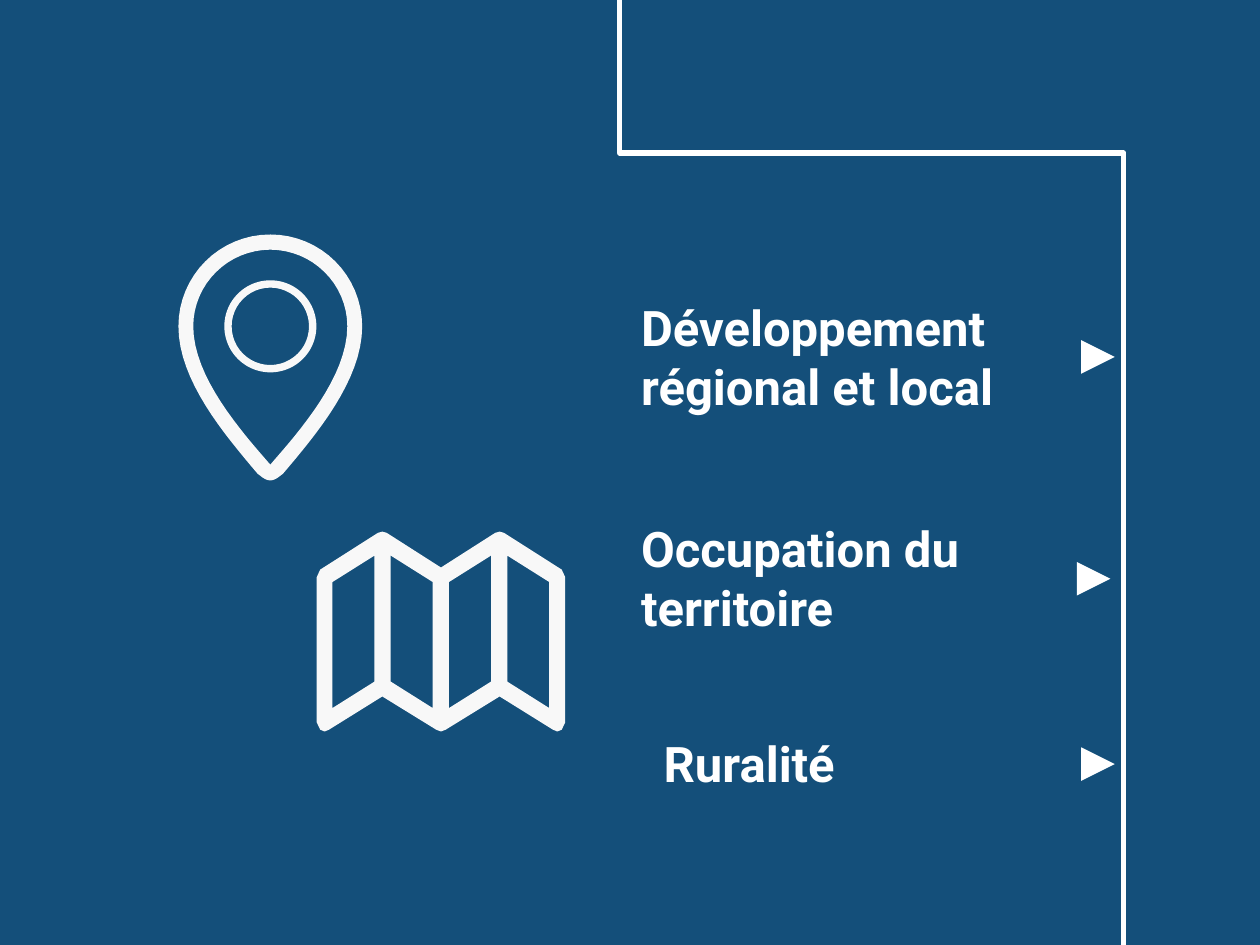
from pptx import Presentation
from pptx.dml.color import RGBColor
from pptx.enum.shapes import MSO_CONNECTOR, MSO_SHAPE
from pptx.enum.text import MSO_AUTO_SIZE
from pptx.util import Pt
from lxml.etree import SubElement
from pptx.oxml.ns import qn

BLUE = RGBColor(0x14, 0x4F, 0x7A)
WHITE = RGBColor(0xFF, 0xFF, 0xFF)
PALE = RGBColor(0xF8, 0xF8, 0xF8)

THEMES = [
    ("Développement régional et local", (359.3, 166.3, 234, 74.9), (617.8, 194.4)),
    ("Occupation du territoire", (359.3, 293, 243.4, 74.9), (615.3, 321.1)),
    ("Ruralité", (372.2, 415.4, 221.8, 41), (617.8, 427)),
]
MARK = 19.2
ROUTE = (354.2, 0, 642.2, 540)
BEND = 0.162

PIN = (154.5, 134)
RIM = [
    [(0, 0), (29, 0), (52.5, 23.5), (52.5, 52.5)],
    [(52.5, 52.5), (52.5, 83.5), (26, 114.5), (7, 137)],
    [(7, 137), (6.3, 137), (3.5, 140.5), (0, 140.5)],
]
HOLE = [
    [(0, 8.7), (24, 8.7), (44, 28.2), (44, 52.5)],
    [(44, 52.5), (44, 81.5), (16.5, 112.5), (0, 131.5)],
]
RING = 52.6

MAP = (252, 303.8)
EDGE = [
    (0, 20.5), (31, 0.7), (33.5, 0), (36, 0.7), (69, 21.7), (71, 26), (71, 109),
    (69, 113.2), (66.5, 114.2), (64, 113.2), (33.5, 94.2), (2.7, 113.2), (0, 114.2),
]
PANE = {"left": -62, "step": 33.3, "wide": 24, "high": 72, "top": 13.7, "drop": 15.1}


def curve(parts, steps=16):
    pts = [parts[0][0]]
    for a, b, c, d in parts:
        for i in range(1, steps + 1):
            t = i / steps
            u = 1 - t
            pts.append(tuple(
                u**3 * p + 3 * u * u * t * q + 3 * u * t * t * r + t**3 * s
                for p, q, r, s in zip(a, b, c, d)
            ))
    return pts


def mirror(half):
    return half + [(-x, y) for x, y in half[-2:0:-1]]


def pane(i):
    x = PANE["left"] + i * PANE["step"]
    ends = [PANE["top"] + PANE["drop"], PANE["top"]]
    a, b = ends if i % 2 == 0 else ends[::-1]
    w, h = PANE["wide"], PANE["high"]
    return [(x, a), (x + w, b), (x + w, b + h), (x, a + h)]


def paint(shape, color):
    shape.shadow.inherit = False
    shape.fill.solid()
    shape.fill.fore_color.rgb = color
    shape.line.fill.background()


def draw(shapes, base, loops):
    loops = [[(Pt(base[0] + x), Pt(base[1] + y)) for x, y in loop] for loop in loops]
    form = shapes.build_freeform(*loops[0][0])
    for n, loop in enumerate(loops):
        if n:
            form.move_to(*loop[0])
        form.add_line_segments(loop[1:], close=True)
    paint(form.convert_to_shape(), PALE)


def route(shapes):
    x1, y1, x2, y2 = ROUTE
    mx, my = (x1 + x2) / 2, (y1 + y2) / 2
    dx, dy = (y2 - y1) / 2, (x2 - x1) / 2
    line = shapes.add_connector(
        MSO_CONNECTOR.ELBOW, Pt(mx + dx), Pt(my - dy), Pt(mx - dx), Pt(my + dy))
    line.line.color.rgb = WHITE
    line.line.width = Pt(3)
    props = line._element.spPr
    props.find(qn("a:xfrm")).set("rot", str(270 * 60000))
    guides = props.find(qn("a:prstGeom")).get_or_add_avLst()
    SubElement(guides, qn("a:gd"), name="adj1", fmla=f"val {round(BEND * 100000)}")
    SubElement(props, qn("a:effectLst"))


def theme(shapes, text, box, spot):
    frame = shapes.add_textbox(*map(Pt, box)).text_frame
    frame.word_wrap = True
    frame.auto_size = MSO_AUTO_SIZE.SHAPE_TO_FIT_TEXT
    frame.text = text
    font = frame.paragraphs[0].runs[0].font
    font.name, font.size, font.bold = "Roboto", Pt(28), True
    font.color.rgb = WHITE
    mark = shapes.add_shape(
        MSO_SHAPE.FLOWCHART_EXTRACT, *map(Pt, spot), Pt(MARK), Pt(MARK))
    mark.rotation = 90
    paint(mark, WHITE)


def main():
    deck = Presentation()
    deck.slide_width, deck.slide_height = Pt(720), Pt(540)
    slide = deck.slides.add_slide(deck.slide_layouts[6])
    slide.background.fill.solid()
    slide.background.fill.fore_color.rgb = BLUE
    shapes = slide.shapes
    route(shapes)
    for item in THEMES:
        theme(shapes, *item)
    x, y = PIN
    ring = shapes.add_shape(
        MSO_SHAPE.DONUT, Pt(x - RING / 2), Pt(y + 26.2), Pt(RING), Pt(RING))
    ring.adjustments[0] = 0.08
    paint(ring, PALE)
    draw(shapes, PIN, [mirror(curve(RIM)), mirror(curve(HOLE))])
    draw(shapes, MAP, [mirror(EDGE)] + [pane(i) for i in range(4)])
    deck.save("out.pptx")


if __name__ == "__main__":
    main()
